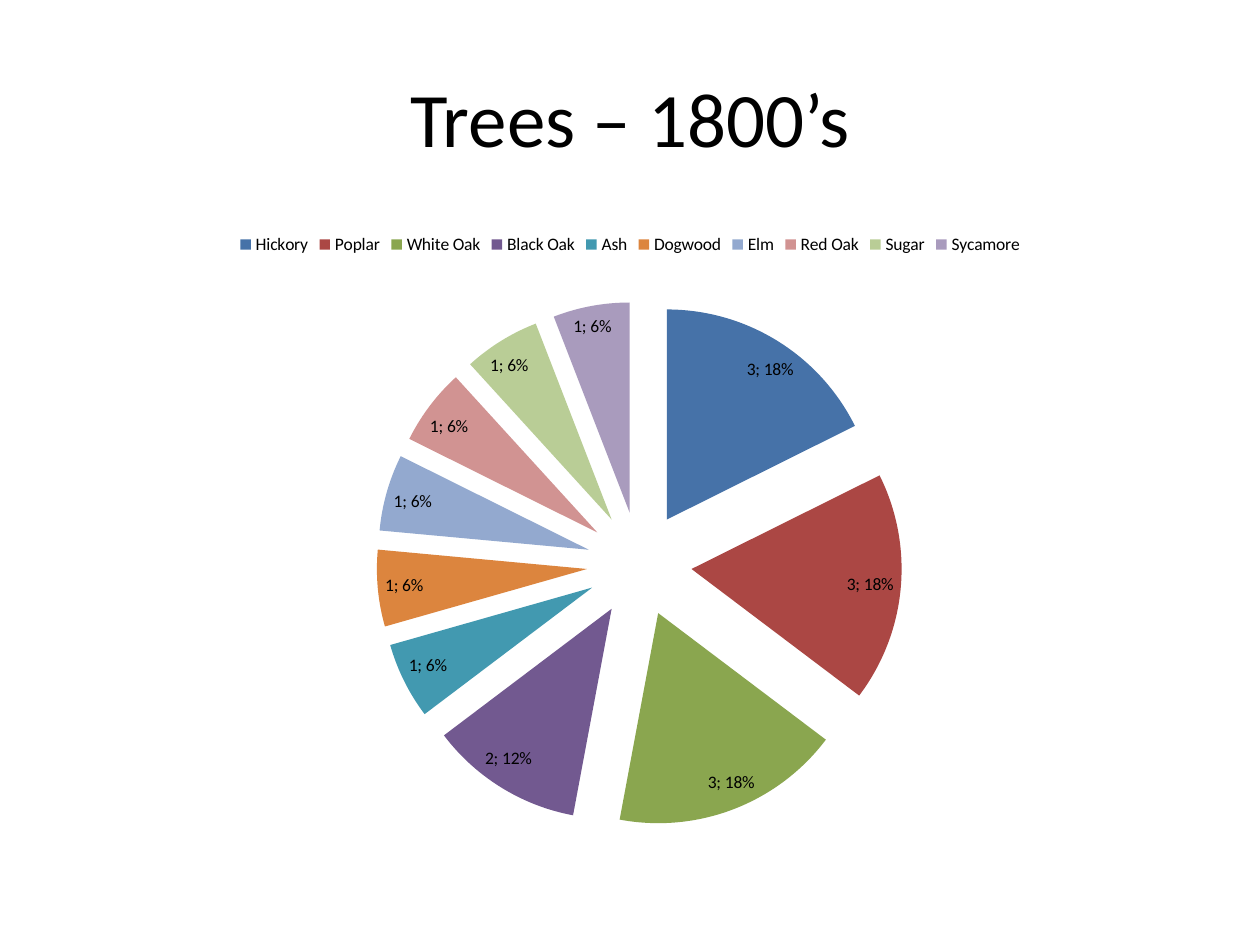
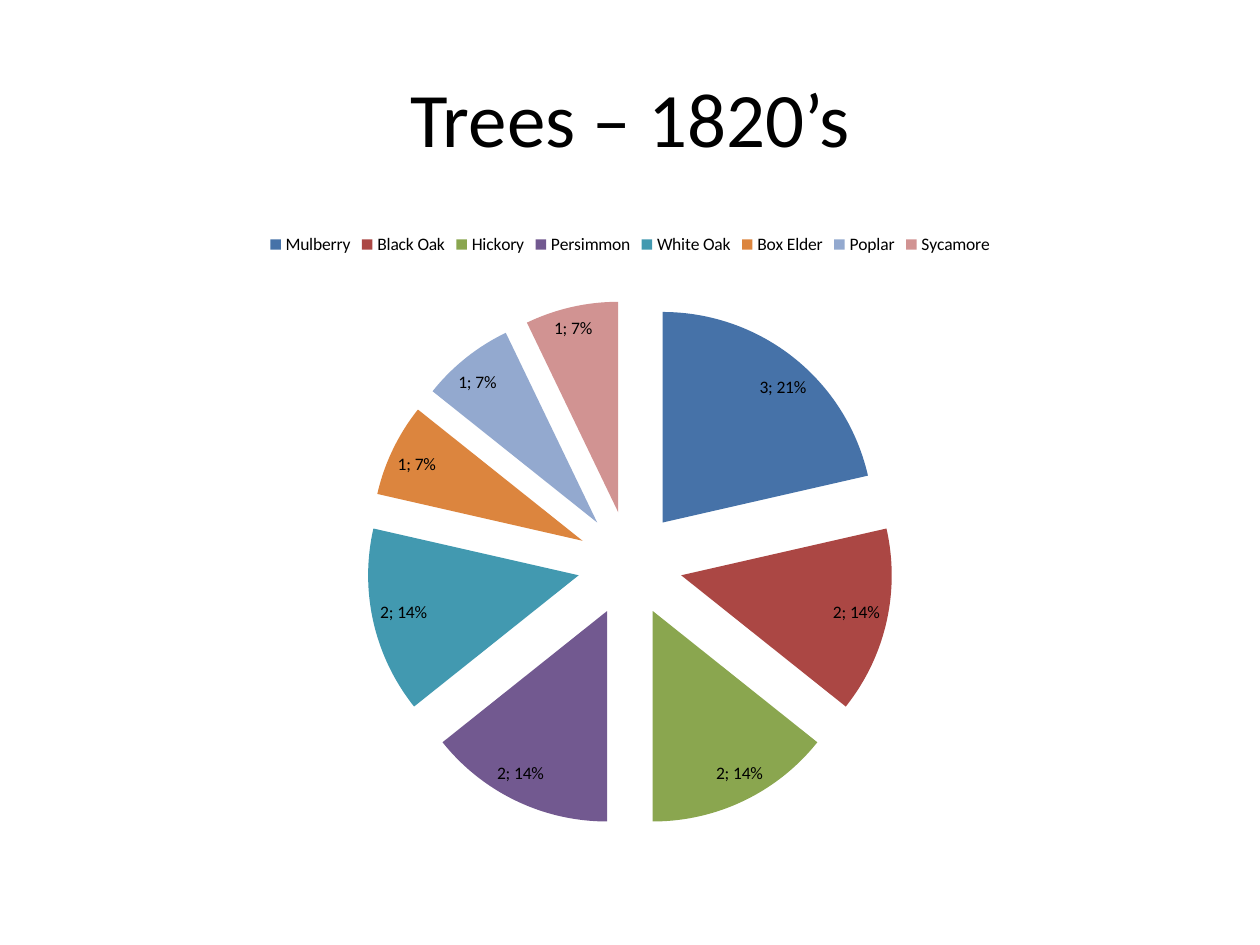
from dataclasses import dataclass

from lxml import etree
from pptx import Presentation
from pptx.chart.data import CategoryChartData
from pptx.dml.color import RGBColor
from pptx.enum.chart import XL_CHART_TYPE as ChartType
from pptx.enum.chart import XL_LABEL_POSITION as LabelPos
from pptx.enum.chart import XL_LEGEND_POSITION as LegendPos
from pptx.enum.text import MSO_ANCHOR, PP_ALIGN
from pptx.oxml.ns import qn
from pptx.util import Inches, Pt

FONT = "Calibri"
COLORS = {
    "text": "000000",
    "blue": "4672A8",
    "red": "AB4744",
    "green": "8AA64F",
    "purple": "725990",
    "teal": "4299B0",
    "orange": "DC853E",
    "light blue": "93A9CF",
    "light red": "D19392",
    "light green": "B9CD96",
    "light purple": "A99BBD",
}
SLICE_COLORS = [name for name in COLORS if name != "text"]
EXPLOSION = 25


@dataclass
class TreeSurvey:
    title: str
    counts: dict[str, int]


SURVEYS = [
    TreeSurvey("Trees – 1800’s", {
        "Hickory": 3, "Poplar": 3, "White Oak": 3, "Black Oak": 2, "Ash": 1,
        "Dogwood": 1, "Elm": 1, "Red Oak": 1, "Sugar": 1, "Sycamore": 1,
    }),
    TreeSurvey("Trees – 1820’s", {
        "Mulberry": 3, "Black Oak": 2, "Hickory": 2, "Persimmon": 2,
        "White Oak": 2, "Box Elder": 1, "Poplar": 1, "Sycamore": 1,
    }),
]


def rgb(name: str) -> RGBColor:
    return RGBColor.from_string(COLORS[name])


def style_font(font, size: int) -> None:
    font.name = FONT
    font.size = Pt(size)
    font.color.rgb = rgb("text")


def add_title(s, text: str) -> None:
    sp = s.shapes.title
    sp.left, sp.top = Inches(0.5), Inches(0.3)
    sp.width, sp.height = Inches(9), Inches(1.25)
    tf = sp.text_frame
    tf.vertical_anchor = MSO_ANCHOR.MIDDLE
    p = tf.paragraphs[0]
    p.alignment = PP_ALIGN.CENTER
    r = p.add_run()
    r.text = text
    style_font(r.font, 44)


def explode(series, percent: int) -> None:
    """Pull every slice away from the centre."""
    explosion = etree.Element(qn("c:explosion"), val=str(percent))
    series._element.find(qn("c:tx")).addnext(explosion)


def add_pie(s, counts: dict[str, int]) -> None:
    data = CategoryChartData()
    data.categories = list(counts)
    data.add_series("Series 1", list(counts.values()))
    chart = s.shapes.add_chart(
        ChartType.PIE, Inches(0.5), Inches(1.75), Inches(9), Inches(4.95), data
    ).chart
    style_font(chart.font, 10)
    chart.has_title = False

    # Legend above the pie
    chart.has_legend = True
    chart.legend.position = LegendPos.TOP
    chart.legend.include_in_layout = False

    # Slices
    plot = chart.plots[0]
    plot.vary_by_categories = True
    series = plot.series[0]
    explode(series, EXPLOSION)
    for i, name in enumerate(SLICE_COLORS[:len(counts)]):
        fill = series.points[i].format.fill
        fill.solid()
        fill.fore_color.rgb = rgb(name)

    # Count and share on each slice
    plot.has_data_labels = True
    labels = plot.data_labels
    labels.show_value = True
    labels.show_percentage = True
    labels.position = LabelPos.BEST_FIT
    separator = etree.Element(qn("c:separator"))
    separator.text = "; "
    labels._element.find(qn("c:showBubbleSize")).addnext(separator)


def main() -> None:
    prs = Presentation()
    prs.slide_width, prs.slide_height = Inches(10), Inches(7.5)
    title_only = prs.slide_layouts[5]
    for survey in SURVEYS:
        s = prs.slides.add_slide(title_only)
        add_title(s, survey.title)
        add_pie(s, survey.counts)
    prs.save("out.pptx")


if __name__ == "__main__":
    main()
